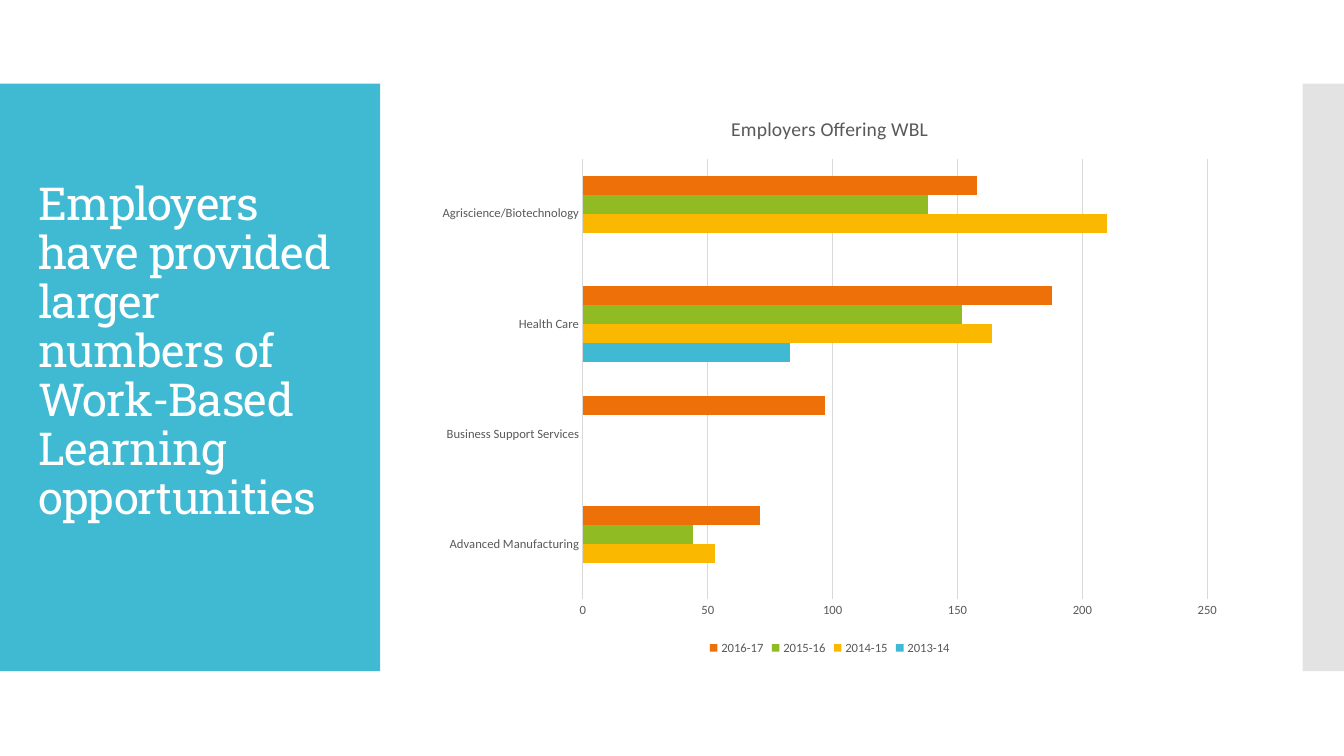
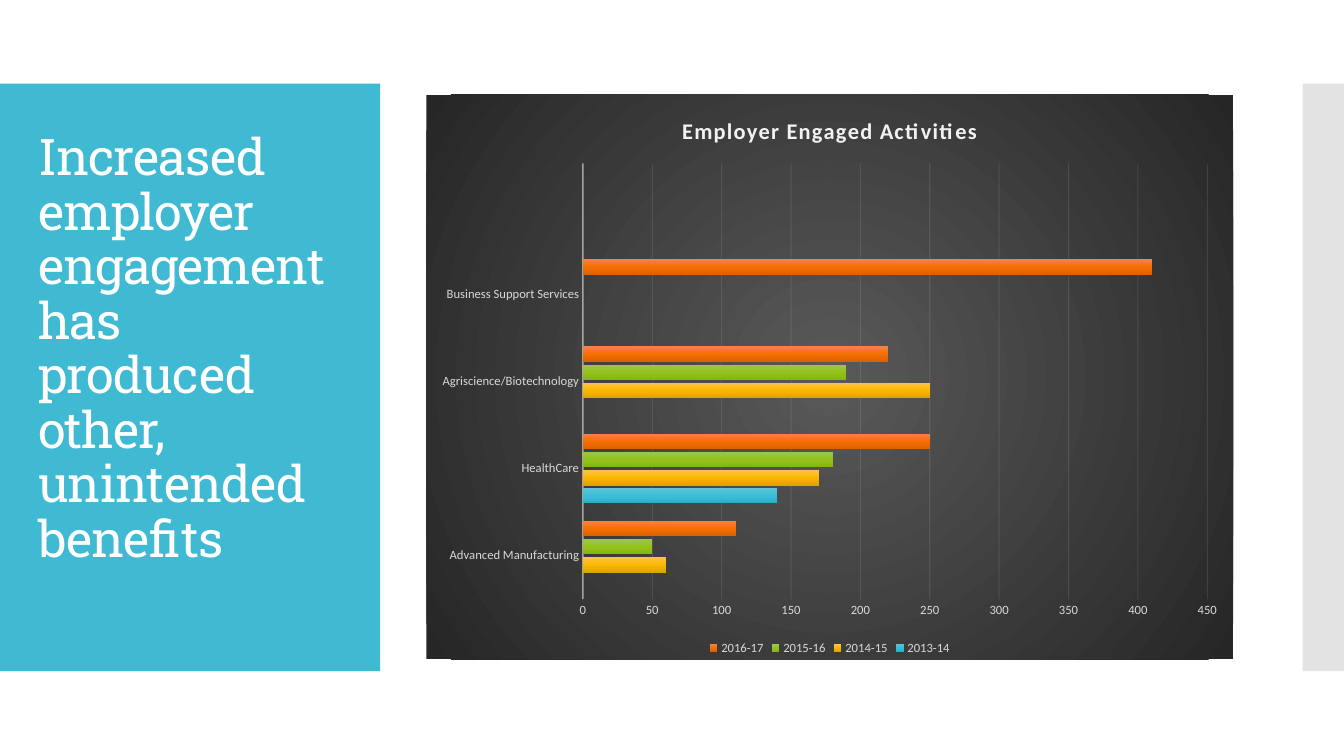
"""Build two slides that chart employer involvement in work-based learning."""
import lxml.etree
import pptx
import pptx.chart.data
import pptx.dml.color
import pptx.enum.chart
import pptx.enum.shapes
import pptx.enum.text
import pptx.oxml
import pptx.oxml.ns
import pptx.util

Inches = pptx.util.Inches
Pt = pptx.util.Pt
qn = pptx.oxml.ns.qn

TEAL, SILVER, WHITE = "40BAD2", "C8C8C8", "FFFFFF"
HEADING_FONT, CHART_FONT = "Roboto Slab", "Calibri"
YEARS = ["2013-14", "2014-15", "2015-16", "2016-17"]
BANDS = [(0, 3.77, TEAL, 100), (12.92, 0.42, SILVER, 50)]
VERTICAL = '<a:lin ang="5400000" scaled="0"/>'
RADIAL = '<a:path path="circle"><a:fillToRect l="50000" t="50000" r="50000" b="50000"/></a:path>'

SLIDES = [
    {
        "heading": "Employers have provided larger numbers of Work-Based Learning opportunities",
        "heading_size": 32.4,
        "chart_title": "Employers Offering WBL",
        "title_size": 14, "title_color": "595959", "title_bold": False, "title_spacing": 0,
        "label_color": "595959",
        "axis_line": ("D9D9D9", 0.75, 100),
        "grid_line": ("D9D9D9", 0.75, 100),
        "gap": 182, "overlap": 0,
        "backdrop": None,
        "sectors": ["Advanced Manufacturing", "Business Support Services",
                    "Health Care", "Agriscience/Biotechnology"],
        "counts": [
            [None, None, 83, None],
            [53, None, 164, 210],
            [44, None, 152, 138],
            [71, 97, 188, 158],
        ],
        "bar_colors": [[TEAL], ["FAB900"], ["90BB23"], ["EE7008"]],
    },
    {
        "heading": "Increased employer engagement has produced other, unintended benefits",
        "heading_size": 36,
        "chart_title": "Employer Engaged Activities",
        "title_size": 16, "title_color": "F2F2F2", "title_bold": True, "title_spacing": 100,
        "label_color": "D9D9D9",
        "axis_line": ("F2F2F2", 1, 54),
        "grid_line": ("F2F2F2", 0.75, 10),
        "gap": 115, "overlap": -20,
        "backdrop": ["595959", "262626"],
        "sectors": ["Advanced Manufacturing", "HealthCare",
                    "Agriscience/Biotechnology", "Business Support Services", ""],
        "counts": [
            [None, 140, None, None, None],
            [60, 170, 250, None, None],
            [50, 180, 190, None, None],
            [110, 250, 220, 410, None],
        ],
        "bar_colors": [
            ["5FC2D8", "39BFD9", "2AAFC9"],
            ["FFC24B", "FAB900", "DEA400"],
            ["9DC650", "93C31B", "86B412"],
            ["F7814B", "F66F00", "DB6300"],
        ],
    },
]


def paint(fill, color, opacity=100):
    """Fill with a solid colour at a given opacity in percent."""
    fill.solid()
    fill.fore_color.rgb = pptx.dml.color.RGBColor.from_string(color)
    if opacity < 100:
        for node in fill._xPr.iter(qn("a:srgbClr")):
            lxml.etree.SubElement(node, qn("a:alpha"), val=str(opacity * 1000))


def shade(properties, colors, direction):
    """Put an evenly spaced gradient first in a set of shape properties."""
    stops = "".join(
        f'<a:gs pos="{100000 * i // (len(colors) - 1)}"><a:srgbClr val="{color}"/></a:gs>'
        for i, color in enumerate(colors))
    properties.insert(0, pptx.oxml.parse_xml(
        f'<a:gradFill {pptx.oxml.ns.nsdecls("a")} rotWithShape="1">'
        f"<a:gsLst>{stops}</a:gsLst>{direction}</a:gradFill>"))


deck = pptx.Presentation()
deck.slide_width, deck.slide_height = Inches(13.33), Inches(7.5)

for content in SLIDES:
    slide = deck.slides.add_slide(deck.slide_layouts[6])

    for left, width, color, opacity in BANDS:
        band = slide.shapes.add_shape(
            pptx.enum.shapes.MSO_SHAPE.RECTANGLE,
            Inches(left), Inches(0.83), Inches(width), Inches(5.83))
        band.shadow.inherit = False
        band.line.fill.background()
        paint(band.fill, color, opacity)

    heading = slide.shapes.add_textbox(
        Inches(0.28), Inches(1.23), Inches(3.22), Inches(5.03)).text_frame
    heading.word_wrap = True
    heading.vertical_anchor = pptx.enum.text.MSO_ANCHOR.MIDDLE
    heading.margin_bottom = Inches(0.05 + 0.015 * content["heading_size"])
    heading.paragraphs[0].line_spacing = 0.9
    words = heading.paragraphs[0].add_run()
    words.text = content["heading"]
    words.font.name = HEADING_FONT
    words.font.size = Pt(content["heading_size"])
    words.font._element.set("spc", "-60")
    paint(words.font.fill, WHITE)

    employer_data = pptx.chart.data.CategoryChartData()
    employer_data.categories = content["sectors"]
    for year, counts in zip(YEARS, content["counts"]):
        employer_data.add_series(year, counts)
    chart = slide.shapes.add_chart(
        pptx.enum.chart.XL_CHART_TYPE.BAR_CLUSTERED,
        Inches(4.23), Inches(0.94), Inches(8), Inches(5.6), employer_data).chart
    chart.font.name = CHART_FONT
    chart.font.size = Pt(10)

    if content["backdrop"]:
        backdrop = pptx.oxml.parse_xml(
            f'<c:spPr {pptx.oxml.ns.nsdecls("c", "a")}><a:ln><a:noFill/></a:ln></c:spPr>')
        shade(backdrop, content["backdrop"], RADIAL)
        chart._chartSpace.find(qn("c:chart")).addnext(backdrop)

    chart.has_title = True
    chart.chart_title.include_in_layout = False
    caption = chart.chart_title.text_frame.paragraphs[0].add_run()
    caption.text = content["chart_title"]
    caption.font.name = CHART_FONT
    caption.font.size = Pt(content["title_size"])
    caption.font.bold = content["title_bold"]
    caption.font._element.set("spc", str(content["title_spacing"]))
    paint(caption.font.fill, content["title_color"])

    chart.has_legend = True
    chart.legend.position = pptx.enum.chart.XL_LEGEND_POSITION.BOTTOM
    chart.legend.include_in_layout = False

    sectors, scale = chart.category_axis, chart.value_axis
    for axis in (sectors, scale):
        axis.major_tick_mark = axis.minor_tick_mark = pptx.enum.chart.XL_TICK_MARK.NONE
    for label_font in (sectors.tick_labels.font, scale.tick_labels.font, chart.legend.font):
        label_font.name = CHART_FONT
        label_font.size = Pt(9)
        paint(label_font.fill, content["label_color"])

    scale.has_major_gridlines = True
    scale.format.line.fill.background()
    for line, style in ((sectors.format.line, content["axis_line"]),
                        (scale.major_gridlines.format.line, content["grid_line"])):
        color, weight, opacity = style
        line.width = Pt(weight)
        paint(line.fill, color, opacity)

    bars = chart.plots[0]
    bars.vary_by_categories = False
    bars.gap_width = content["gap"]
    bars.overlap = content["overlap"]
    for year_bars, colors in zip(bars.series, content["bar_colors"]):
        if len(colors) == 1:
            paint(year_bars.format.fill, colors[0])
        else:
            shade(year_bars._element.get_or_add_spPr(), colors, VERTICAL)

deck.save("out.pptx")
